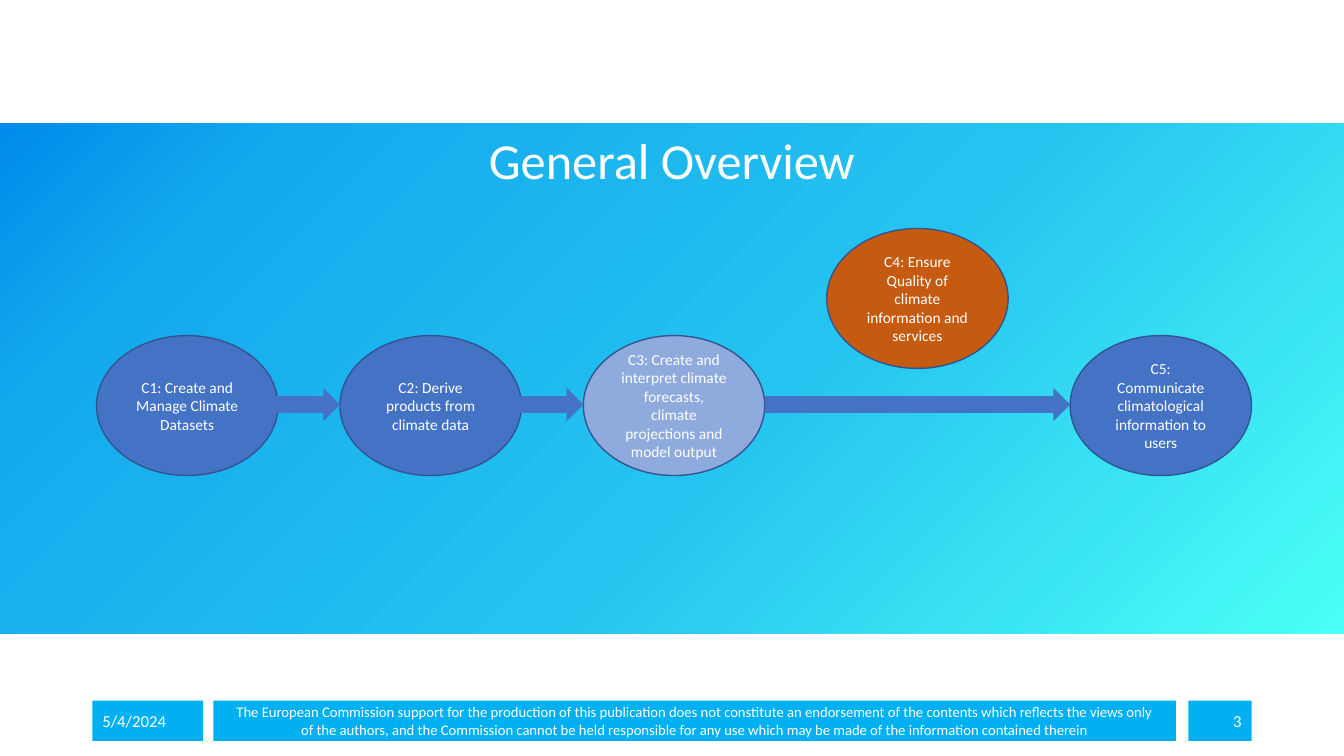
from lxml import etree
from pptx import Presentation
from pptx.dml.color import RGBColor
from pptx.enum.shapes import MSO_SHAPE
from pptx.enum.text import MSO_ANCHOR, MSO_AUTO_SIZE, PP_ALIGN
from pptx.oxml.ns import qn
from pptx.util import Pt

RECT, OVAL, ARROW = MSO_SHAPE.RECTANGLE, MSO_SHAPE.OVAL, MSO_SHAPE.RIGHT_ARROW
LEFT, CENTER, RIGHT = PP_ALIGN.LEFT, PP_ALIGN.CENTER, PP_ALIGN.RIGHT
MIDDLE, BOTTOM = MSO_ANCHOR.MIDDLE, MSO_ANCHOR.BOTTOM

FONT = "Calibri"
COLORS = {
    "white": "FFFFFF",
    "footer": "00B0F0",
    "blue": "4472C4",
    "light": "8FAADC",
    "orange": "C55A11",
    "outline": "325491",
}
BAND_STOPS = [(0, "4BFFF6"), (44, "25C3F0"), (84, "14A9ED"), (100, "008BEA")]

OVAL_W, OVAL_H = 129.6, 100
ARROW_H = 23.8
RAISE = 76.5
STEPS = [
    ("C1: Create and Manage Climate Datasets", "blue", 0),
    ("C2: Derive products from climate data", "blue", 0),
    ("C3: Create and interpret climate forecasts, climate projections and model output", "light", 0),
    ("C4: Ensure Quality of climate information and services", "orange", RAISE),
    ("C5: Communicate climatological information to users", "blue", 0),
]
ARROWS = [(0, 1, 9), (1, 2, 9), (2, 4, 0)]

DISCLAIMER = [
    "The European Commission support for the production of this publication does not "
    "constitute an endorsement of the contents which reflects the views only",
    "of the authors, and the Commission cannot be held responsible for any use which "
    "may be made of the information contained therein",
]


def rgb(name):
    return RGBColor.from_string(COLORS[name])


def write(sp, lines, size=11, align=CENTER, anchor=MIDDLE, spacing=None):
    tf = sp.text_frame
    tf.word_wrap = True
    tf.auto_size = MSO_AUTO_SIZE.NONE
    tf.vertical_anchor = anchor
    for i, line in enumerate(lines):
        p = tf.add_paragraph() if i else tf.paragraphs[0]
        p.alignment = align
        p.line_spacing = spacing
        r = p.add_run()
        r.text = line
        r.font.size = Pt(size)
        r.font.name = FONT
        r.font.color.rgb = rgb("white")


def add_box(slide, kind, x, y, w, h, fill, line=None):
    sp = slide.shapes.add_shape(kind, Pt(x), Pt(y), Pt(w), Pt(h))
    sp.shadow.inherit = False
    sp.fill.solid()
    sp.fill.fore_color.rgb = rgb(fill)
    if line:
        sp.line.color.rgb = rgb(line)
        sp.line.width = Pt(1)
    else:
        sp.line.fill.background()
    return sp


def add_band(slide, x, y, w, h):
    sp = add_box(slide, RECT, x, y, w, h, "footer")
    sp.fill.gradient()
    sp.fill.gradient_angle = 135
    stops = sp.element.spPr.find(qn("a:gradFill")).find(qn("a:gsLst"))
    for stop in list(stops):
        stops.remove(stop)
    for pos, color in BAND_STOPS:
        stop = etree.SubElement(stops, qn("a:gs"), pos=str(pos * 1000))
        etree.SubElement(stop, qn("a:srgbClr"), val=color)
    sp.element.getparent().insert(2, sp.element)


def add_title(slide, x, y, w, h):
    sp = slide.shapes.title
    sp.left, sp.top, sp.width, sp.height = Pt(x), Pt(y), Pt(w), Pt(h)
    write(sp, ["General Overview"], size=36, anchor=BOTTOM, spacing=0.9)


def add_flow(slide, x, y, w):
    pitch = (w - OVAL_W) / (len(STEPS) - 1)
    for i, (text, fill, rise) in enumerate(STEPS):
        sp = add_box(slide, OVAL, x + i * pitch, y - rise, OVAL_W, OVAL_H, fill, "outline")
        write(sp, [text])
    for start, end, overlap in ARROWS:
        left = x + start * pitch + OVAL_W - overlap
        top = y + (OVAL_H - ARROW_H) / 2 - 0.7
        add_box(slide, ARROW, left, top, x + end * pitch - left, ARROW_H, "blue")


def add_footer(slide, x, y, w, h):
    date_w, note_x, note_w, number_w = 79.2, 86.4, 687.6, 45.2
    cells = [
        (0, date_w, ["5/4/2024"], 12, LEFT),
        (note_x, note_w, DISCLAIMER, 10.5, CENTER),
        (w - number_w, number_w, ["3"], 12, RIGHT),
    ]
    for dx, cell_w, lines, size, align in cells:
        sp = add_box(slide, RECT, x + dx, y, cell_w, h, "footer")
        write(sp, lines, size=size, align=align)


def main():
    prs = Presentation()
    prs.slide_width, prs.slide_height = Pt(960), Pt(540)
    slide = prs.slides.add_slide(prs.slide_layouts[5])
    add_band(slide, 0, 88.2, 960, 364.4)
    add_title(slide, 66, 88.2, 828, 51.2)
    add_footer(slide, 66, 500.5, 828, 28.75)
    add_flow(slide, 69, 239.7, 825)
    prs.save("out.pptx")


if __name__ == "__main__":
    main()
